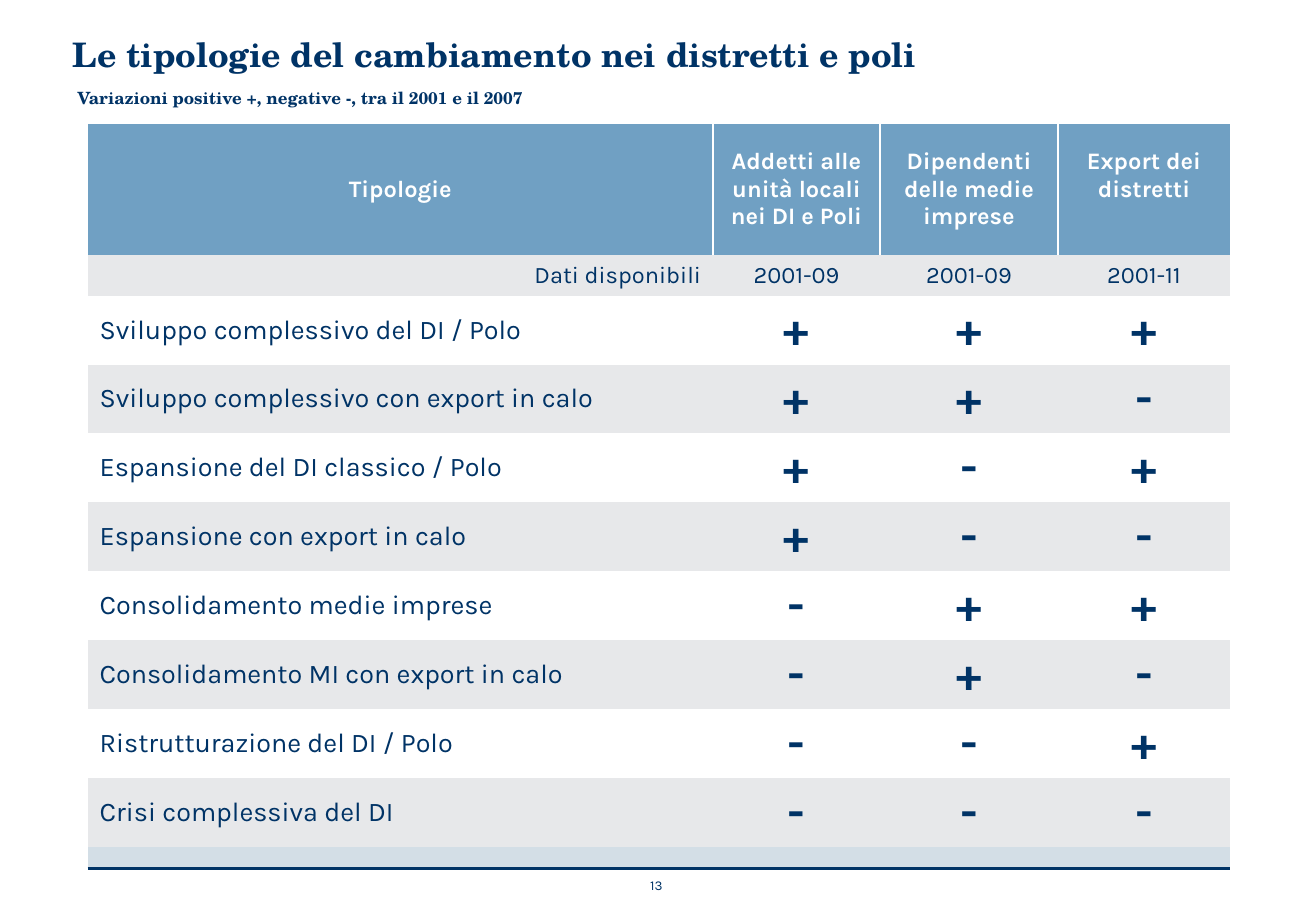
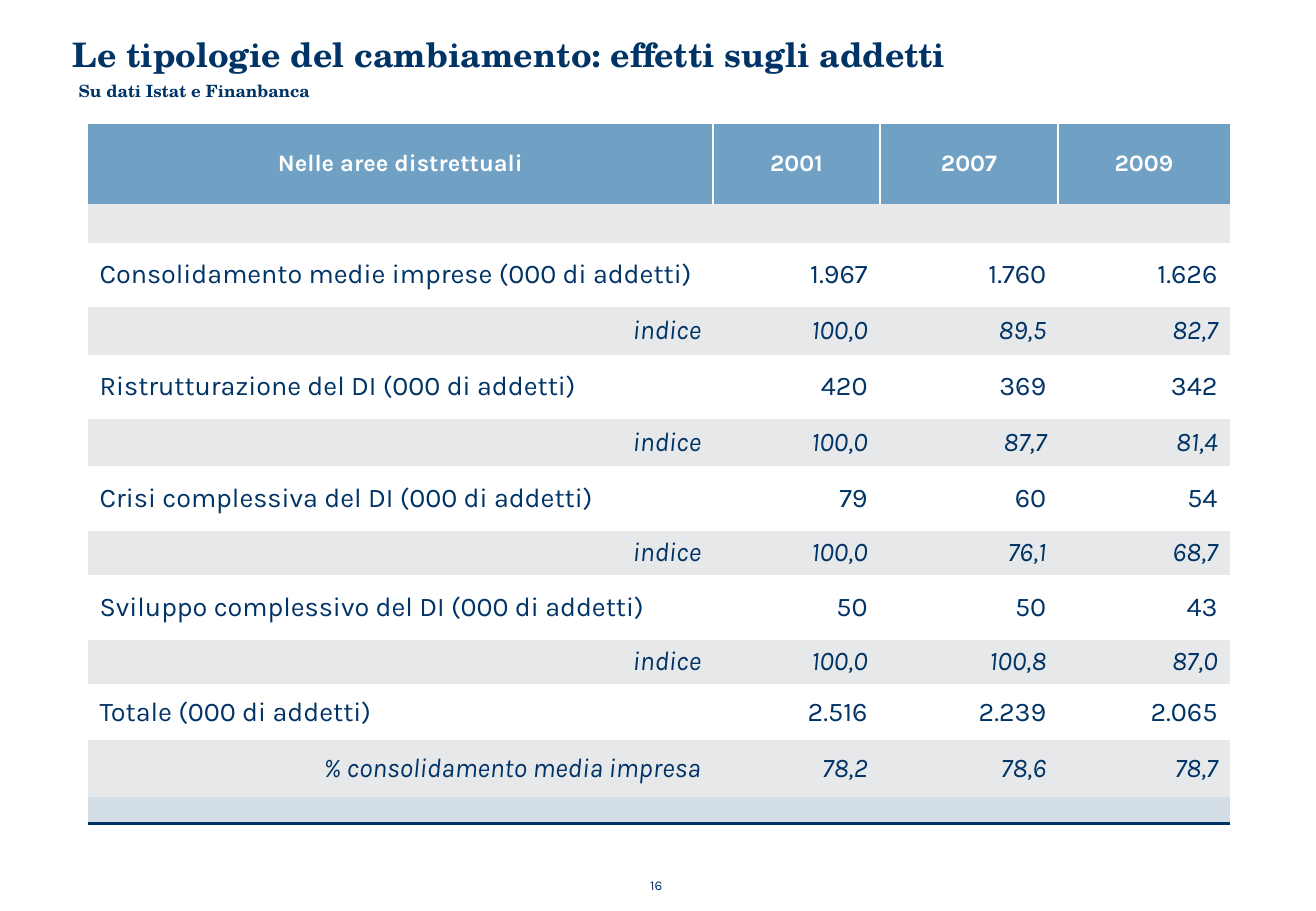
import pptx
import pptx.util
import pptx.dml.color
import pptx.enum.text
import pptx.oxml.ns
from lxml import etree

Inches = pptx.util.Inches
Pt = pptx.util.Pt
qn = pptx.oxml.ns.qn
ALIGN = pptx.enum.text.PP_ALIGN
ANCHOR = pptx.enum.text.MSO_ANCHOR

COLORS = {
    "navy": "003366",
    "header": "70A0C3",
    "band": "E7E8EA",
    "closing": "D3DEE6",
    "white": "FFFFFF",
}
TITLE_FONT = "TeX Gyre Schola"
BODY_FONT = "Karla"
NO_STYLE = "{2D5ABB26-0587-4C30-8999-92F81FD0307C}"
COLUMN_WIDTHS = [5.15, 1.37, 1.47, 1.41]
EMPTY = ["", "", "", ""]

ROW_STYLES = {
    "header": {"size": 14, "bold": True, "color": "white", "align": (ALIGN.CENTER, ALIGN.CENTER)},
    "period": {"size": 14, "align": (ALIGN.RIGHT, ALIGN.CENTER)},
    "sign": {"size": 16, "value_size": 28, "value_bold": True, "align": (ALIGN.LEFT, ALIGN.CENTER)},
    "count": {"size": 16, "align": (ALIGN.LEFT, ALIGN.RIGHT)},
    "index": {"size": 16, "italic": True, "align": (ALIGN.RIGHT, ALIGN.RIGHT)},
    "empty": {"size": 8, "align": (ALIGN.LEFT, ALIGN.LEFT)},
    "closing": {"size": 8, "align": (ALIGN.LEFT, ALIGN.LEFT)},
}

SIGNS = [
    ("Sviluppo complessivo del DI / Polo", "+++"),
    ("Sviluppo complessivo con export in calo", "++-"),
    ("Espansione del DI classico / Polo", "+-+"),
    ("Espansione con export in calo", "+--"),
    ("Consolidamento medie imprese", "-++"),
    ("Consolidamento MI con export in calo", "-+-"),
    ("Ristrutturazione del DI / Polo", "--+"),
    ("Crisi complessiva del DI", "---"),
]

SLIDES = [
    {
        "number": "13",
        "title": "Le tipologie del cambiamento nei distretti e poli",
        "subtitle": "Variazioni positive +, negative -, tra il 2001 e il 2007",
        "subtitle_at": (0.54, 0.65),
        "rows": [
            ("header", 1.08, ["Tipologie", "Addetti alle unità locali nei DI e Poli",
                              "Dipendenti delle medie imprese", "Export dei distretti"]),
            ("period", 0.33, ["Dati disponibili", "2001-09", "2001-09", "2001-11"]),
            *[("sign", 0.55, [label, *signs]) for label, signs in SIGNS],
            ("closing", 0.18, EMPTY),
        ],
        "bottom_margins": {(0, 3): 0.28},
    },
    {
        "number": "16",
        "title": "Le tipologie del cambiamento: effetti sugli addetti",
        "subtitle": "Su dati Istat e Finanbanca",
        "subtitle_at": (0.55, 0.59),
        "rows": [
            ("header", 0.66, ["Nelle aree distrettuali", "2001", "2007", "2009"]),
            ("empty", 0.32, EMPTY),
            ("count", 0.53, ["Consolidamento medie imprese (000 di addetti)", "1.967", "1.760", "1.626"]),
            ("index", 0.39, ["indice", "100,0", "89,5", "82,7"]),
            ("count", 0.53, ["Ristrutturazione del DI (000 di addetti)", "420", "369", "342"]),
            ("index", 0.39, ["indice", "100,0", "87,7", "81,4"]),
            ("count", 0.53, ["Crisi complessiva del DI (000 di addetti)", "79", "60", "54"]),
            ("index", 0.36, ["indice", "100,0", "76,1", "68,7"]),
            ("count", 0.53, ["Sviluppo complessivo del DI (000 di addetti)", "50", "50", "43"]),
            ("index", 0.36, ["indice", "100,0", "100,8", "87,0"]),
            ("count", 0.46, ["Totale (000 di addetti)", "2.516", "2.239", "2.065"]),
            ("index", 0.47, ["% consolidamento media impresa", "78,2", "78,6", "78,7"]),
            ("closing", 0.22, EMPTY),
        ],
        "bottom_margins": {},
    },
]


def rgb(name):
    return pptx.dml.color.RGBColor.from_string(COLORS[name])


def set_font(paragraph, name, size, color="navy", bold=False, italic=False):
    font = paragraph.font
    font.name, font.size, font.bold, font.italic = name, Pt(size), bold, italic
    font.color.rgb = rgb(color)


def add_text(slide, text, box, margins, font_name, size, bold=False, anchor=ANCHOR.TOP, wrap=True):
    shape = slide.shapes.add_textbox(*[Inches(length) for length in box])
    frame = shape.text_frame
    frame.margin_left, frame.margin_top, frame.margin_right, frame.margin_bottom = [
        Inches(margin) for margin in margins]
    frame.word_wrap = wrap
    frame.vertical_anchor = anchor
    frame.text = text
    set_font(frame.paragraphs[0], font_name, size, bold=bold)
    return shape


def add_border(cell, side, color, width):
    properties = cell._tc.get_or_add_tcPr()
    line = etree.SubElement(properties, qn("a:ln" + side), w=str(Pt(width)))
    fill = etree.SubElement(line, qn("a:solidFill"))
    etree.SubElement(fill, qn("a:srgbClr"), val=COLORS[color])


def format_cell(cell, kind, text, row, column):
    style = ROW_STYLES[kind]
    if kind == "header":
        if column > 0:
            add_border(cell, "L", "white", 1.5)
        if column < len(COLUMN_WIDTHS) - 1:
            add_border(cell, "R", "white", 1.5)
    elif kind == "closing":
        add_border(cell, "B", "navy", 2)
    cell.fill.solid()
    banding = "band" if row % 2 else "white"
    cell.fill.fore_color.rgb = rgb(kind if kind in ("header", "closing") else banding)
    cell.vertical_anchor = ANCHOR.MIDDLE
    paragraph = cell.text_frame.paragraphs[0]
    paragraph.alignment = style["align"][column > 0]
    size, bold = style["size"], style.get("bold", False)
    if column > 0:
        size, bold = style.get("value_size", size), style.get("value_bold", bold)
    set_font(paragraph, BODY_FONT, size, style.get("color", "navy"), bold, style.get("italic", False))
    if text:
        paragraph.add_run().text = text
    else:
        cell.margin_top = cell.margin_bottom = 0
        etree.SubElement(paragraph._p, qn("a:endParaRPr"), sz=str(size * 100))


def add_table(slide, rows, bottom_margins):
    heights = [height for _, height, _ in rows]
    frame = slide.shapes.add_table(len(rows), len(COLUMN_WIDTHS), Inches(0.72), Inches(1.02),
                                   Inches(sum(COLUMN_WIDTHS)), Inches(sum(heights)))
    table = frame.table
    table.first_row = table.horz_banding = False
    frame.element.find(".//" + qn("a:tableStyleId")).text = NO_STYLE
    for column, width in zip(table.columns, COLUMN_WIDTHS):
        column.width = Inches(width)
    for row, (kind, height, texts) in enumerate(rows):
        table.rows[row].height = Inches(height)
        for column, text in enumerate(texts):
            format_cell(table.cell(row, column), kind, text, row, column)
    for position, margin in bottom_margins.items():
        table.cell(*position).margin_bottom = Inches(margin)


def build_slide(presentation, content):
    slide = presentation.slides.add_slide(presentation.slide_layouts[6])
    number = add_text(slide, content["number"], (5.24, 7.15, 0.37, 0.34), (0.11, 0.1, 0.11, 0.1),
                      BODY_FONT, 8, wrap=False)
    number.text_frame.auto_size = pptx.enum.text.MSO_AUTO_SIZE.SHAPE_TO_FIT_TEXT
    add_text(slide, content["title"], (0.5, 0.23, 9.84, 0.52), (0.1, 0.05, 0.2, 0.05),
             TITLE_FONT, 20, bold=True)
    add_table(slide, content["rows"], content["bottom_margins"])
    add_text(slide, content["subtitle"], (*content["subtitle_at"], 9.84, 0.31), (0.1, 0.09, 0.1, 0.09),
             TITLE_FONT, 10, bold=True, anchor=ANCHOR.MIDDLE)


def main():
    presentation = pptx.Presentation()
    presentation.slide_width = Inches(10.83)
    presentation.slide_height = Inches(7.5)
    for content in SLIDES:
        build_slide(presentation, content)
    presentation.save("out.pptx")


if __name__ == "__main__":
    main()
